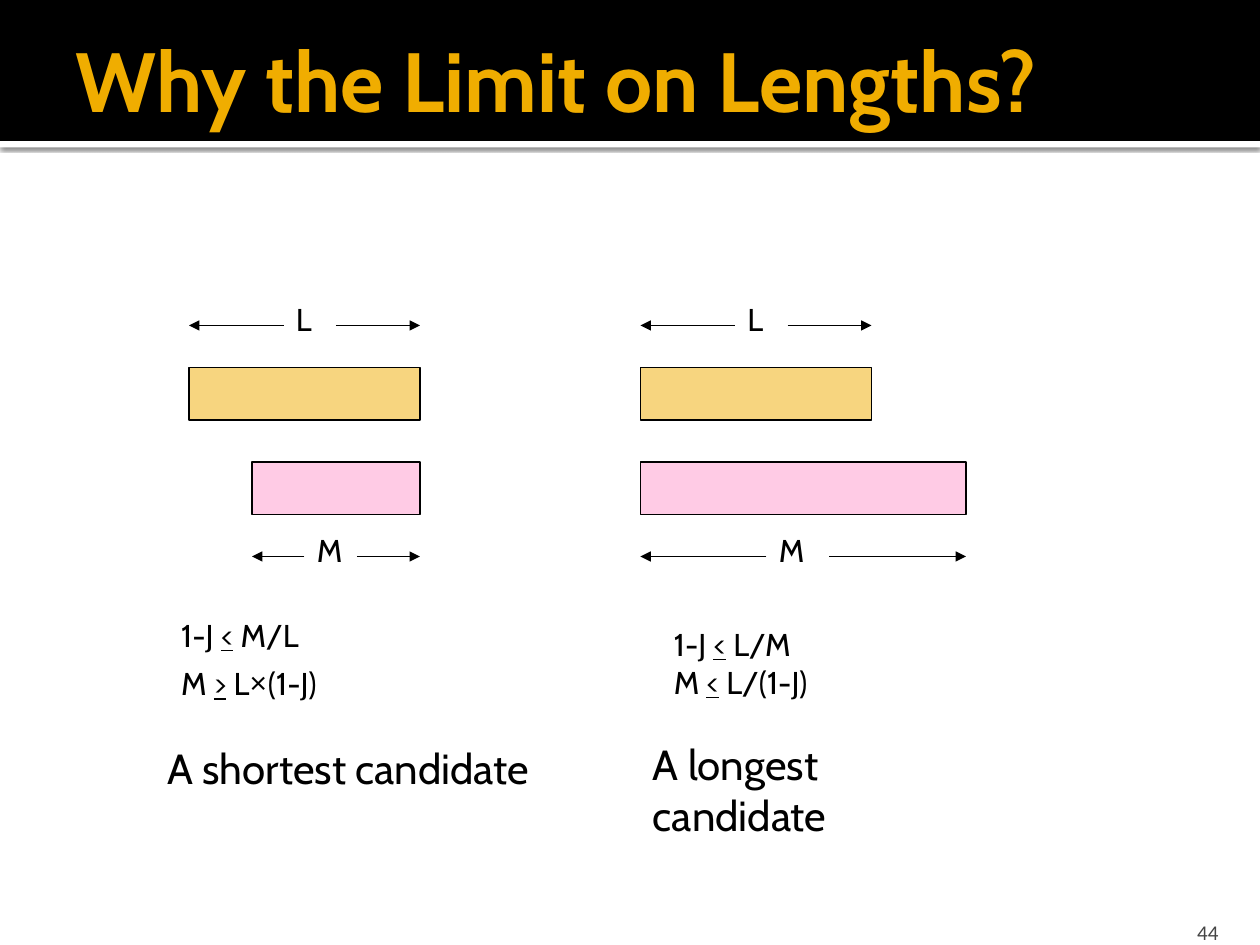
"""Build the slide that explains the length limits on candidate strings."""
from dataclasses import dataclass

import pptx
import pptx.dml.color
import pptx.enum.shapes
import pptx.enum.text
import pptx.oxml
import pptx.oxml.ns
import pptx.util

Pt = pptx.util.Pt
RECTANGLE = pptx.enum.shapes.MSO_SHAPE.RECTANGLE
STRAIGHT = pptx.enum.shapes.MSO_CONNECTOR.STRAIGHT
ANCHOR = pptx.enum.text.MSO_ANCHOR
ALIGN = pptx.enum.text.PP_ALIGN
FIT = pptx.enum.text.MSO_AUTO_SIZE.SHAPE_TO_FIT_TEXT
NAMESPACE = pptx.oxml.ns.nsdecls("a")

BLACK, WHITE, GOLD, PINK, GREY = "000000", "FFFFFF", "F0AD00", "FF99CC", "454545"
BODY = {"name": "Cabin", "size": Pt(18), "color": BLACK}
LARGE = BODY | {"size": Pt(24)}
UNDERLINED = BODY | {"underline": True}
TITLE = {"name": "Cabin", "size": Pt(48), "color": GOLD, "bold": True}
NUMBER = {"name": "Calibri", "size": Pt(12), "color": GREY}


@dataclass(frozen=True)
class Box:
    left: float
    top: float
    width: float
    height: float


@dataclass(frozen=True)
class Bar:
    label: str
    box: Box
    color: str
    arrow_y: float
    gap_start: float
    gap_end: float


@dataclass(frozen=True)
class Line:
    runs: list[tuple[str, dict]]
    indent: float = 0
    space_before: float = 0


@dataclass(frozen=True)
class Note:
    box: Box
    lines: list[Line]


BARS = [
    Bar("L", Box(108, 210, 132, 30), GOLD, 186, 162, 192),
    Bar("M", Box(144, 264, 96, 30), PINK, 318, 174, 204),
    Bar("L", Box(366, 210, 132, 30), GOLD, 186, 420, 450),
    Bar("M", Box(366, 264, 186, 30), PINK, 318, 438, 474),
]

NOTES = [
    Note(Box(88.5, 348.5, 222, 108.5), [
        Line([("1-J ", BODY), ("<", UNDERLINED), (" M/L", BODY)], 8),
        Line([("M ", BODY), (">", UNDERLINED), (" L", BODY), ("×", LARGE), ("(1-J)", BODY)], 8),
        Line([("A shortest candidate", LARGE)], space_before=22),
    ]),
    Note(Box(366, 353.5, 213, 101.5), [
        Line([("1-J ", BODY), ("<", UNDERLINED), (" L/M", BODY)], 12),
        Line([("M ", BODY), ("<", UNDERLINED), (" L/(1-J)", BODY)], 12),
        Line([("A longest candidate", LARGE)], space_before=22),
    ]),
]


def set_color(color_format, value: str) -> None:
    """Give a colour format the colour of a hex string."""
    color_format.rgb = pptx.dml.color.RGBColor.from_string(value)


def place(box: Box) -> list:
    """Return the box as four lengths in points."""
    return [Pt(value) for value in (box.left, box.top, box.width, box.height)]


def add_rectangle(slide, box: Box, color: str):
    """Add a plain filled rectangle without outline."""
    shape = slide.shapes.add_shape(RECTANGLE, *place(box))
    shape.shadow.inherit = False
    shape.fill.solid()
    set_color(shape.fill.fore_color, color)
    shape.line.fill.background()
    return shape


def add_text(slide, box: Box, lines: list[Line], frame_format: dict, alignment=ALIGN.LEFT) -> None:
    """Add a text box whose runs are formatted from dicts."""
    frame = slide.shapes.add_textbox(*place(box)).text_frame
    for name, value in frame_format.items():
        setattr(frame, name, value)
    for index, line in enumerate(lines):
        paragraph = frame.add_paragraph() if index else frame.paragraphs[0]
        paragraph.alignment = alignment
        paragraph.space_before = Pt(line.space_before)
        if line.indent:
            paragraph._p.get_or_add_pPr().set("marL", str(Pt(line.indent)))
        for text, font_format in line.runs:
            run = paragraph.add_run()
            run.text = text
            for name, value in font_format.items():
                if name == "color":
                    set_color(run.font.color, value)
                else:
                    setattr(run.font, name, value)


def add_arrow(slide, start: float, end: float, y: float) -> None:
    """Add a horizontal arrow that points at its end."""
    arrow = slide.shapes.add_connector(STRAIGHT, Pt(start), Pt(y), Pt(end), Pt(y))
    arrow.line.width = Pt(0.75)
    set_color(arrow.line.color, BLACK)
    arrow.line._get_or_add_ln().append(
        pptx.oxml.parse_xml(f'<a:tailEnd {NAMESPACE} type="triangle"/>'))
    arrow._element.spPr.append(pptx.oxml.parse_xml(f"<a:effectLst {NAMESPACE}/>"))


def add_bar(slide, bar: Bar) -> None:
    """Add a half-transparent bar with its labelled length arrows."""
    shape = add_rectangle(slide, bar.box, bar.color)
    shape.line.width = Pt(0.75)
    set_color(shape.line.color, BLACK)
    color = shape._element.spPr.find(pptx.oxml.ns.qn("a:solidFill"))[0]
    color.append(pptx.oxml.parse_xml(f'<a:alpha {NAMESPACE} val="50000"/>'))
    label_width = 24.5 if bar.label == "L" else 29.5
    add_text(slide, Box(bar.gap_start, bar.arrow_y - 18, label_width, 31),
             [Line([(bar.label, BODY)])], {"word_wrap": False, "auto_size": FIT})
    add_arrow(slide, bar.gap_start, bar.box.left, bar.arrow_y)
    add_arrow(slide, bar.gap_end, bar.box.left + bar.box.width, bar.arrow_y)


def add_header(slide) -> None:
    """Add the black title band, its shadowed edge, the title and the number."""
    edge = add_rectangle(slide, Box(0, 80.6, 720, 3.6), WHITE)
    edge._element.spPr.find(pptx.oxml.ns.qn("a:effectLst")).append(pptx.oxml.parse_xml(
        f'<a:outerShdw {NAMESPACE} blurRad="{Pt(2.5)}" dist="{Pt(0.8)}" dir="5400000">'
        f'<a:srgbClr val="{BLACK}"><a:alpha val="60000"/></a:srgbClr></a:outerShdw>'))
    add_rectangle(slide, Box(0, 0, 720, 80.6), BLACK)
    add_text(slide, Box(645.8, 518.4, 57.6, 21.6), [Line([("44", NUMBER)])],
             {"word_wrap": True, "vertical_anchor": ANCHOR.BOTTOM, "margin_bottom": 0},
             ALIGN.RIGHT)
    add_text(slide, Box(36, 12.2, 684, 66.2), [Line([("Why the Limit on Lengths?", TITLE)])],
             {"word_wrap": True, "vertical_anchor": ANCHOR.MIDDLE, "margin_right": Pt(3.6)})


def main() -> None:
    """Build and save the presentation."""
    presentation = pptx.Presentation()
    presentation.slide_width, presentation.slide_height = Pt(720), Pt(540)
    slide = presentation.slides.add_slide(presentation.slide_layouts[6])
    add_header(slide)
    for bar in BARS:
        add_bar(slide, bar)
    for note in NOTES:
        add_text(slide, note.box, note.lines, {"word_wrap": False, "auto_size": FIT})
    presentation.save("out.pptx")


if __name__ == "__main__":
    main()
